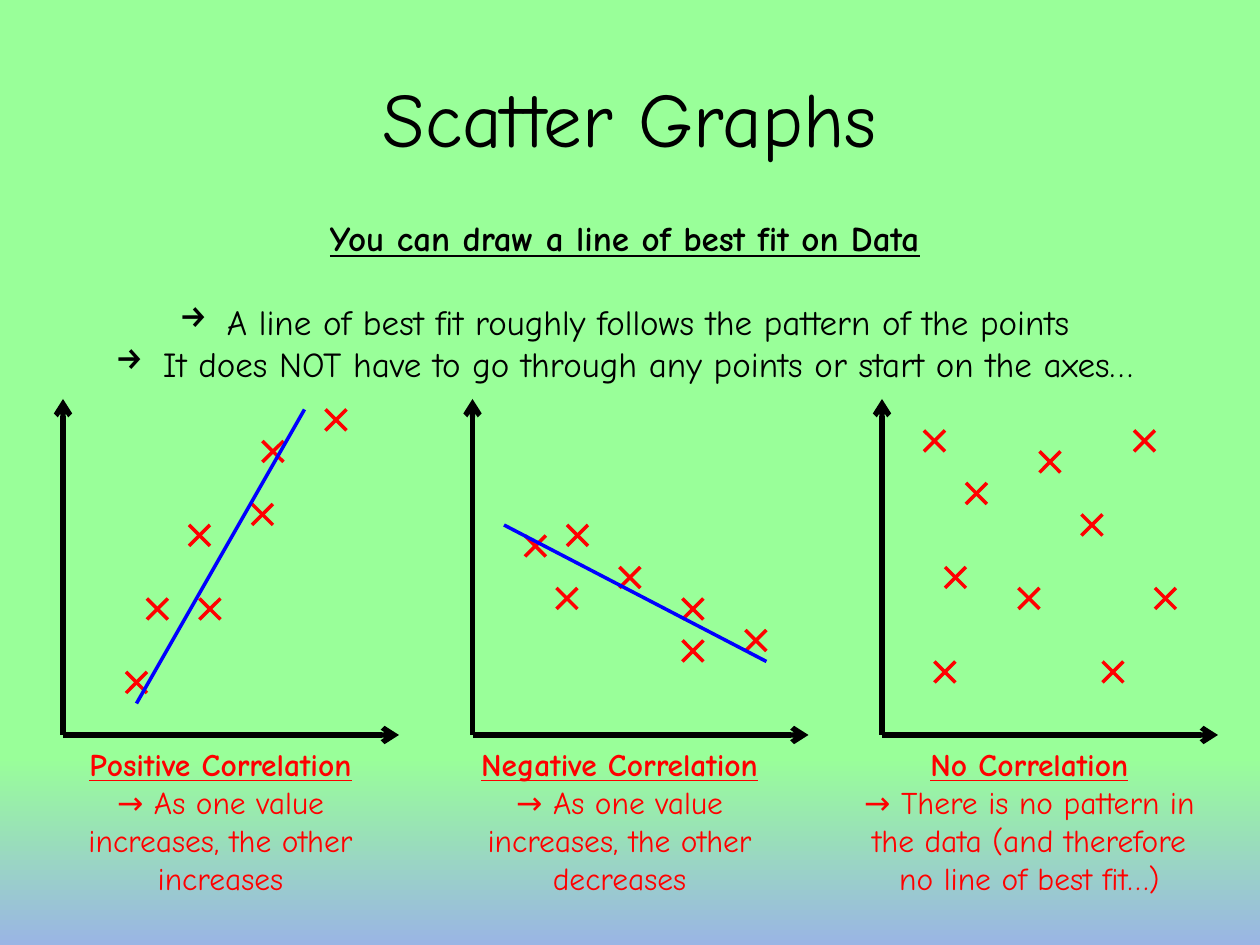
from lxml.etree import SubElement
from pptx import Presentation
from pptx.dml.color import RGBColor
from pptx.enum.shapes import MSO_CONNECTOR
from pptx.enum.text import MSO_ANCHOR, PP_ALIGN
from pptx.oxml.ns import qn
from pptx.util import Cm, Pt

FONT = "Comic Neue"
COLORS = {
    "text": "000000",
    "accent": "FF0000",
    "fit": "0000FF",
    "top": "99FF99",
    "bottom": "9AB5E4",
}
STEP = 2.54 / 12  # drawing grid: a twelfth of an inch, in cm
AXIS_LENGTH = 32  # grid steps
CROSS_SIZE = 2  # grid steps
GRAPH_LEFT, GRAPH_TOP, GRAPH_PITCH = 1.27, 38 * STEP, 39 * STEP

# Crosses (top-left corner) and fit lines are in grid steps from the graph's corner
GRAPHS = [
    {
        "crosses": [(19, 4), (12, 12), (13, 19), (8, 19), (6, 26), (25, 1), (18, 10)],
        "fit": ((7, 29), (23, 1)),
        "heading": "Positive Correlation",
        "meaning": "→ As one value increases, the other increases",
        "caption_box": (1.06, 14.9, 6.77, 3.33),
    },
    {
        "crosses": [(14, 16), (9, 12), (5, 13), (20, 19), (20, 23), (26, 22), (8, 18)],
        "fit": ((3, 12), (28, 25)),
        "heading": "Negative Correlation",
        "meaning": "→ As one value increases, the other decreases",
        "caption_box": (8.89, 14.9, 7.2, 3.33),
    },
    {
        "crosses": [(4, 3), (8, 8), (5, 25), (21, 25), (24, 3),
                    (13, 18), (26, 18), (19, 11), (15, 5), (6, 16)],
        "fit": None,
        "heading": "No Correlation",
        "meaning": "→ There is no pattern in the data (and therefore no line of best fit…)",
        "caption_box": (17.15, 14.9, 7.2, 4.11),
    },
]


def color(name):
    return RGBColor.from_string(COLORS[name])


def add_run(paragraph, text, size, color_name, heading=False):
    paragraph.alignment = PP_ALIGN.CENTER
    run = paragraph.add_run()
    run.text = text
    run.font.name = FONT
    run.font.size = Pt(size)
    run.font.bold = heading
    run.font.underline = heading
    run.font.color.rgb = color(color_name)


def add_text_frame(slide, box):
    text_frame = slide.shapes.add_textbox(*map(Cm, box)).text_frame
    text_frame.word_wrap = True
    return text_frame


def add_bullet(paragraph, character):
    properties = paragraph._p.get_or_add_pPr()
    properties.set("marL", str(Cm(0.95)))
    properties.set("indent", str(Cm(-0.95)))
    SubElement(properties, qn("a:buChar"), char=character)


def add_line(shapes, corner, start, end, color_name, width, arrow=False):
    """Draw a line between two grid points measured from the corner."""
    points = [Cm(corner[axis] + point[axis] * STEP)
              for point in (start, end) for axis in (0, 1)]
    line = shapes.add_connector(MSO_CONNECTOR.STRAIGHT, *points)
    line.line.color.rgb = color(color_name)
    line.line.width = Pt(width)
    if arrow:
        SubElement(line.line._get_or_add_ln(), qn("a:tailEnd"), type="arrow")
    SubElement(line._element.spPr, qn("a:effectLst"))


def set_background(slide):
    fill = slide.background.fill
    fill.gradient()
    fill.gradient_angle = 270
    for stop, position, name in zip(fill.gradient_stops, (0.8, 1), ("top", "bottom")):
        stop.position = position
        stop.color.rgb = color(name)


def add_title(slide, box):
    title = slide.shapes.title
    title.left, title.top, title.width, title.height = map(Cm, box)
    title.text_frame.vertical_anchor = MSO_ANCHOR.MIDDLE
    add_run(title.text_frame.paragraphs[0], "Scatter Graphs", 44, "text")


def add_introduction(slide, box):
    text_frame = add_text_frame(slide, box)
    heading = text_frame.paragraphs[0]
    add_run(heading, "You can draw a line of best fit on Data", 20, "text", heading=True)
    heading.space_after = Pt(24)
    for text in (
        "A line of best fit roughly follows the pattern of the points",
        "It does NOT have to go through any points or start on the axes…",
    ):
        paragraph = text_frame.add_paragraph()
        add_run(paragraph, text, 20, "text")
        add_bullet(paragraph, "→")


def add_graph(slide, corner, crosses, fit):
    # Axes
    axes = slide.shapes.add_group_shape().shapes
    origin = (0, AXIS_LENGTH)
    for end in ((0, 0), (AXIS_LENGTH, AXIS_LENGTH)):
        add_line(axes, corner, origin, end, "text", 3, arrow=True)

    # Data points
    for x, y in crosses:
        cross = slide.shapes.add_group_shape().shapes
        right, bottom = x + CROSS_SIZE, y + CROSS_SIZE
        add_line(cross, corner, (x, y), (right, bottom), "accent", 2)
        add_line(cross, corner, (right, y), (x, bottom), "accent", 2)

    # Line of best fit
    if fit:
        add_line(slide.shapes, corner, *fit, "fit", 2)


def add_caption(slide, box, heading, meaning):
    text_frame = add_text_frame(slide, box)
    add_run(text_frame.paragraphs[0], heading, 18, "accent", heading=True)
    add_run(text_frame.add_paragraph(), meaning, 18, "accent")


def main():
    presentation = Presentation()
    presentation.slide_width, presentation.slide_height = Cm(25.4), Cm(19.05)
    slide = presentation.slides.add_slide(presentation.slide_layouts.get_by_name("Title Only"))
    set_background(slide)
    add_title(slide, (1.27, 0.76, 22.86, 3.18))
    add_introduction(slide, (0.43, 4.24, 24.33, 3.68))
    for index, graph in enumerate(GRAPHS):
        corner = (GRAPH_LEFT + index * GRAPH_PITCH, GRAPH_TOP)
        add_graph(slide, corner, graph["crosses"], graph["fit"])
        add_caption(slide, graph["caption_box"], graph["heading"], graph["meaning"])
    presentation.save("out.pptx")


if __name__ == "__main__":
    main()
